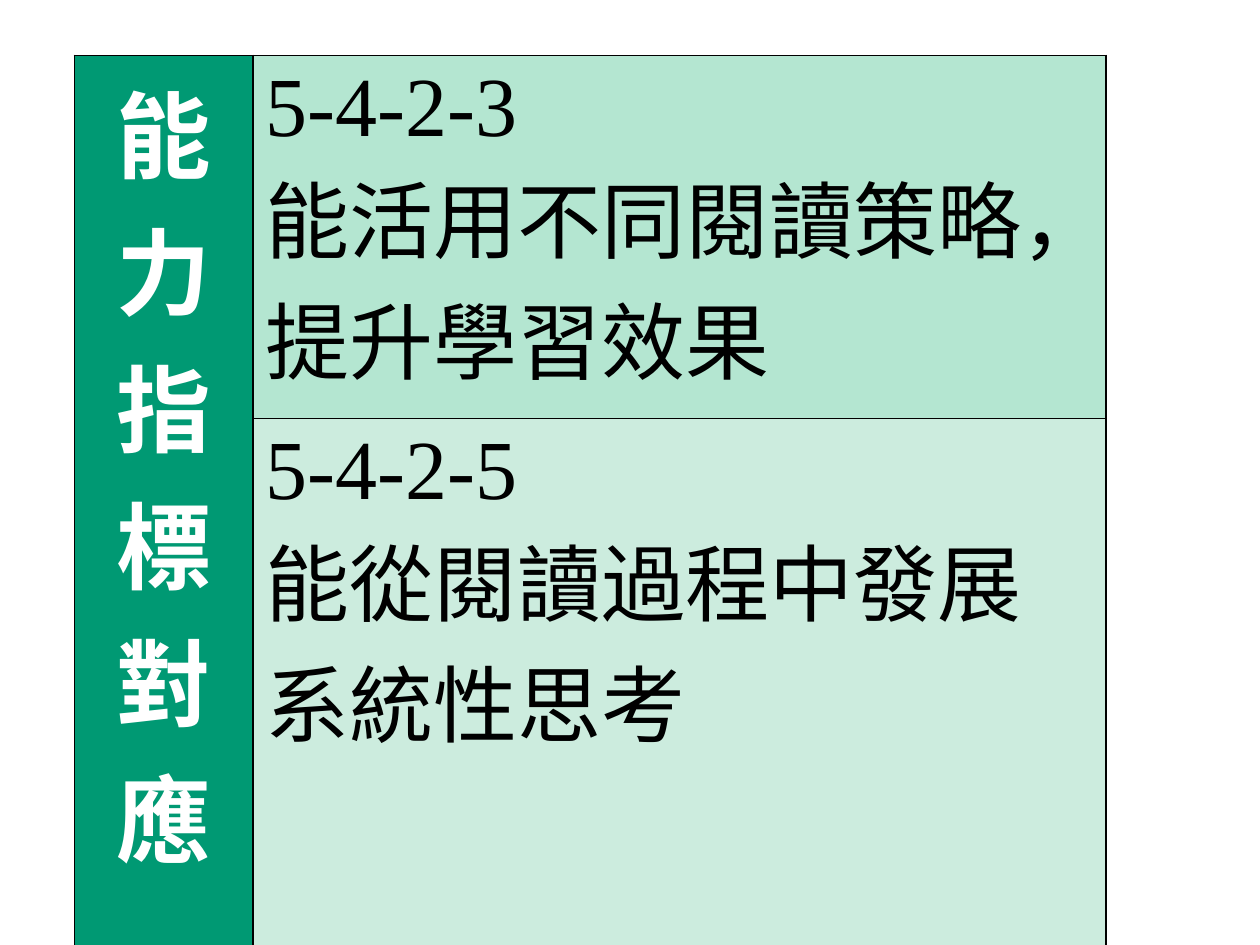
from lxml.etree import SubElement
from pptx import Presentation
from pptx.dml.color import RGBColor
from pptx.enum.text import PP_ALIGN
from pptx.oxml.ns import qn
from pptx.util import Inches, Pt

FONT = "Times New Roman"
BLACK = "000000"
WHITE = "FFFFFF"
COLUMNS = (1.42, 6.77)
ROWS = (2.88, 2.62)
INDICATORS = (
    ("B4E6D1", ("5-4-2-3", "能活用不同閱讀策略，提升學習效果")),
    ("CCECDE", ("5-4-2-5", "能從閱讀過程中發展系統性思考")),
)


def color(value):
    return RGBColor.from_string(value)


def set_borders(cell):
    tcPr = cell._tc.get_or_add_tcPr()
    for index, side in enumerate(("lnL", "lnR", "lnT", "lnB")):
        line = tcPr.makeelement(qn(f"a:{side}"), {"w": str(Pt(1))})
        fill = SubElement(line, qn("a:solidFill"))
        SubElement(fill, qn("a:srgbClr"), val=BLACK)
        tcPr.insert(index, line)


def style_cell(cell, fill):
    cell.fill.solid()
    cell.fill.fore_color.rgb = color(fill)
    set_borders(cell)


def write_cell(cell, lines, size, text_color, bold=False, align=PP_ALIGN.LEFT):
    tf = cell.text_frame
    tf.text = "\n".join(lines)
    for p in tf.paragraphs:
        p.alignment = align
        p.font.name = FONT
        p.font.size = Pt(size)
        p.font.bold = bold
        p.font.color.rgb = color(text_color)


def add_grid(s):
    frame = s.shapes.add_table(
        len(ROWS), len(COLUMNS), Inches(0.59), Inches(0.44),
        Inches(sum(COLUMNS)), Inches(sum(ROWS)))
    table = frame.table
    for column, width in zip(table.columns, COLUMNS):
        column.width = Inches(width)
    for row, height in zip(table.rows, ROWS):
        row.height = Inches(height)
    return table


def main():
    prs = Presentation()
    prs.slide_width, prs.slide_height = Inches(10), Inches(7.5)
    s = prs.slides.add_slide(prs.slide_layouts[6])
    table = add_grid(s)
    label = table.cell(0, 0)
    label.merge(table.cell(len(ROWS) - 1, 0))
    write_cell(label, ["能力指標對應"], 54, WHITE, True, PP_ALIGN.CENTER)
    for row, (fill, lines) in enumerate(INDICATORS):
        style_cell(table.cell(row, 0), "009973")
        style_cell(table.cell(row, 1), fill)
        write_cell(table.cell(row, 1), lines, 48, BLACK)
    prs.save("out.pptx")


if __name__ == "__main__":
    main()
